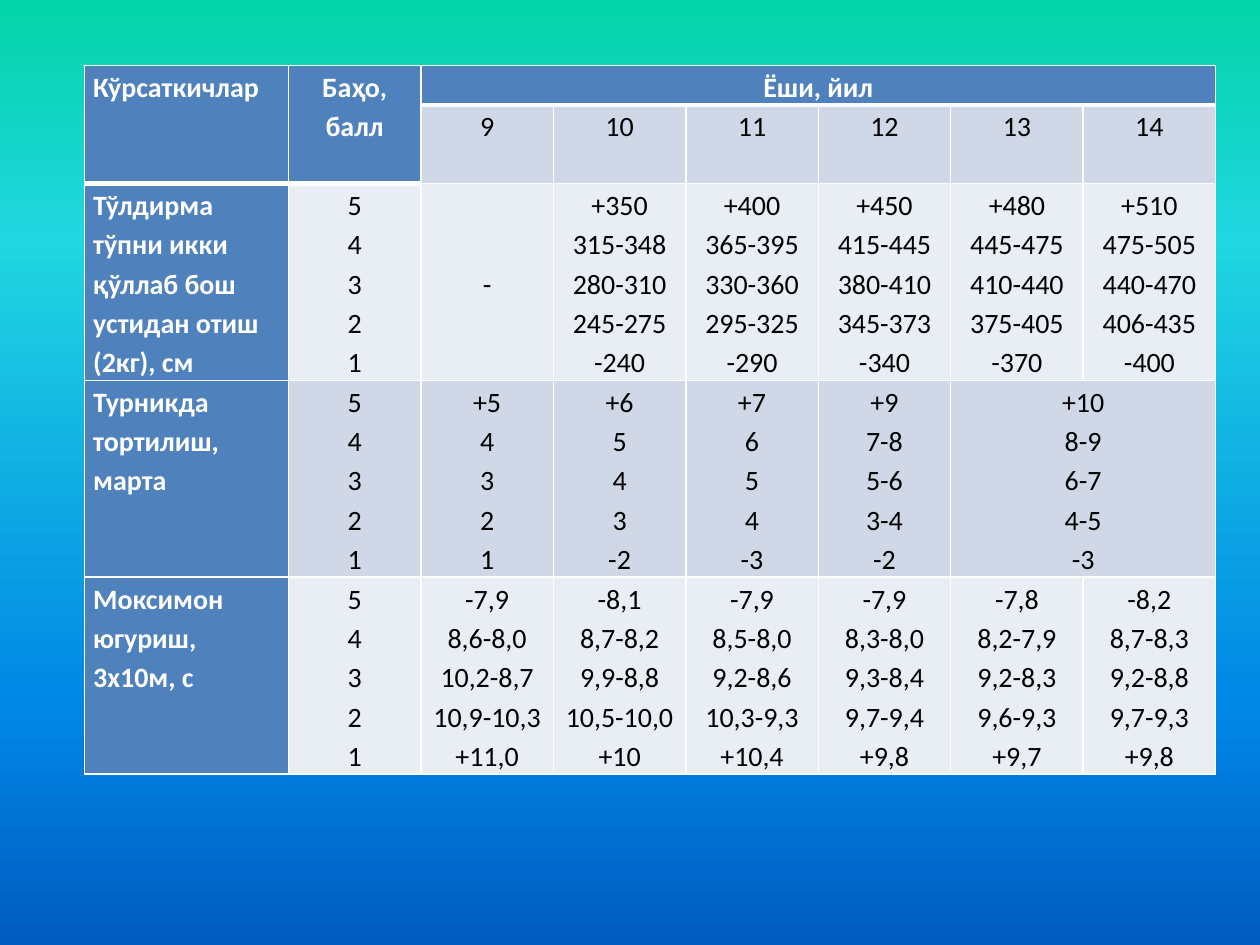
import pptx
import pptx.dml.color
import pptx.enum.text
import pptx.oxml
import pptx.oxml.ns
import pptx.util
from lxml import etree

Pt = pptx.util.Pt
qn = pptx.oxml.ns.qn

COLORS = {"head": "4F81BD", "dark_band": "D0D8E8", "light_band": "E9EDF4",
          "white": "FFFFFF", "black": "000000"}
BACKGROUND = [(0, "03D4A8"), (25, "21D6E0"), (75, "0087E6"), (100, "005CBF")]

HEADINGS = ["Кўрсаткичлар", "Баҳо, балл", "Ёши, йил"]
AGES = ["9", "10", "11", "12", "13", "14"]
GRADES = "5 4 3 2 1"
# One string per age; each word is a line matching a grade.
TESTS = [
    ("Тўлдирма тўпни икки қўллаб бош устидан отиш (2кг), см",
     ["-",
      "+350 315-348 280-310 245-275 -240",
      "+400 365-395 330-360 295-325 -290",
      "+450 415-445 380-410 345-373 -340",
      "+480 445-475 410-440 375-405 -370",
      "+510 475-505 440-470 406-435 -400"]),
    ("Турникда тортилиш, марта",
     ["+5 4 3 2 1",
      "+6 5 4 3 -2",
      "+7 6 5 4 -3",
      "+9 7-8 5-6 3-4 -2",
      "+10 8-9 6-7 4-5 -3"]),
    ("Моксимон югуриш, 3х10м, с",
     ["-7,9 8,6-8,0 10,2-8,7 10,9-10,3 +11,0",
      "-8,1 8,7-8,2 9,9-8,8 10,5-10,0 +10",
      "-7,9 8,5-8,0 9,2-8,6 10,3-9,3 +10,4",
      "-7,9 8,3-8,0 9,3-8,4 9,7-9,4 +9,8",
      "-7,8 8,2-7,9 9,2-8,3 9,6-9,3 +9,7",
      "-8,2 8,7-8,3 9,2-8,8 9,7-9,3 +9,8"]),
]

LEFT, TOP, HEIGHT = 48.25, 37.5, 375
COL_WIDTHS = [116.6] + [75.7] * 7
ROW_HEIGHTS = [18.9, 19.1] + [97.2] * len(TESTS)
MERGES = [((0, 0), (1, 0)), ((0, 1), (1, 1)), ((0, 2), (0, 7)), ((3, 6), (3, 7))]


def rgb(name):
    return pptx.dml.color.RGBColor.from_string(COLORS[name])


def paint_background(s):
    fill = s.background.fill
    fill.gradient()
    fill.gradient_angle = 270
    stops = s._element.find(".//" + qn("a:gsLst"))
    for stop in list(stops):
        stops.remove(stop)
    for percent, color in BACKGROUND:
        stop = etree.SubElement(stops, qn("a:gs"), pos=str(percent * 1000))
        etree.SubElement(stop, qn("a:srgbClr"), val=color)


def set_borders(cell):
    """White lines, with a thick one below the header."""
    tcPr = cell._tc.get_or_add_tcPr()
    for i, (side, width) in enumerate([("L", 1), ("R", 1), ("T", 1), ("B", 3)]):
        ln = pptx.oxml.parse_xml(
            f'<a:ln{side} {pptx.oxml.ns.nsdecls("a")} w="{Pt(width)}"><a:solidFill>'
            f'<a:srgbClr val="{COLORS["white"]}"/></a:solidFill></a:ln{side}>')
        tcPr.insert(i, ln)


def write_cell(cell, lines, fill, heading=False, centered=True):
    cell.fill.solid()
    cell.fill.fore_color.rgb = rgb(fill)
    cell.margin_left = cell.margin_right = Pt(5)
    cell.margin_top = cell.margin_bottom = 0
    tf = cell.text_frame
    for i, line in enumerate(lines):
        p = tf.add_paragraph() if i else tf.paragraphs[0]
        p.line_spacing = 1.15
        if centered:
            p.alignment = pptx.enum.text.PP_ALIGN.CENTER
        r = p.add_run()
        r.text = line
        r.font.name = "Calibri"
        r.font.size = Pt(16)
        r.font.bold = heading
        r.font.color.rgb = rgb("white" if heading else "black")


def add_norms_table(s):
    frame = s.shapes.add_table(len(ROW_HEIGHTS), len(COL_WIDTHS), Pt(LEFT), Pt(TOP),
                               Pt(sum(COL_WIDTHS)), Pt(HEIGHT))
    table = frame.table
    table.first_col = True
    for column, width in zip(table.columns, COL_WIDTHS):
        column.width = Pt(width)
    for row, height in zip(table.rows, ROW_HEIGHTS):
        row.height = Pt(height)
    frame.height = Pt(HEIGHT)
    for start, end in MERGES:
        table.cell(*start).merge(table.cell(*end))

    for col, text in enumerate(HEADINGS):
        cell = table.cell(0, col)
        write_cell(cell, [text], "head", heading=True, centered=col > 0)
        set_borders(cell)
    for col, age in enumerate(AGES, 2):
        write_cell(table.cell(1, col), [age], "dark_band")
    for row, (test, norms) in enumerate(TESTS, 2):
        band = "dark_band" if row % 2 else "light_band"
        write_cell(table.cell(row, 0), [test], "head", heading=True, centered=False)
        for col, text in enumerate([GRADES] + norms, 1):
            cell = table.cell(row, col)
            write_cell(cell, text.split(), band)
            if text == "-":
                cell.vertical_anchor = pptx.enum.text.MSO_ANCHOR.MIDDLE


def main():
    prs = pptx.Presentation()
    prs.slide_width, prs.slide_height = Pt(720), Pt(540)
    s = prs.slides.add_slide(prs.slide_layouts[6])
    paint_background(s)
    add_norms_table(s)
    prs.save("out.pptx")


if __name__ == "__main__":
    main()
